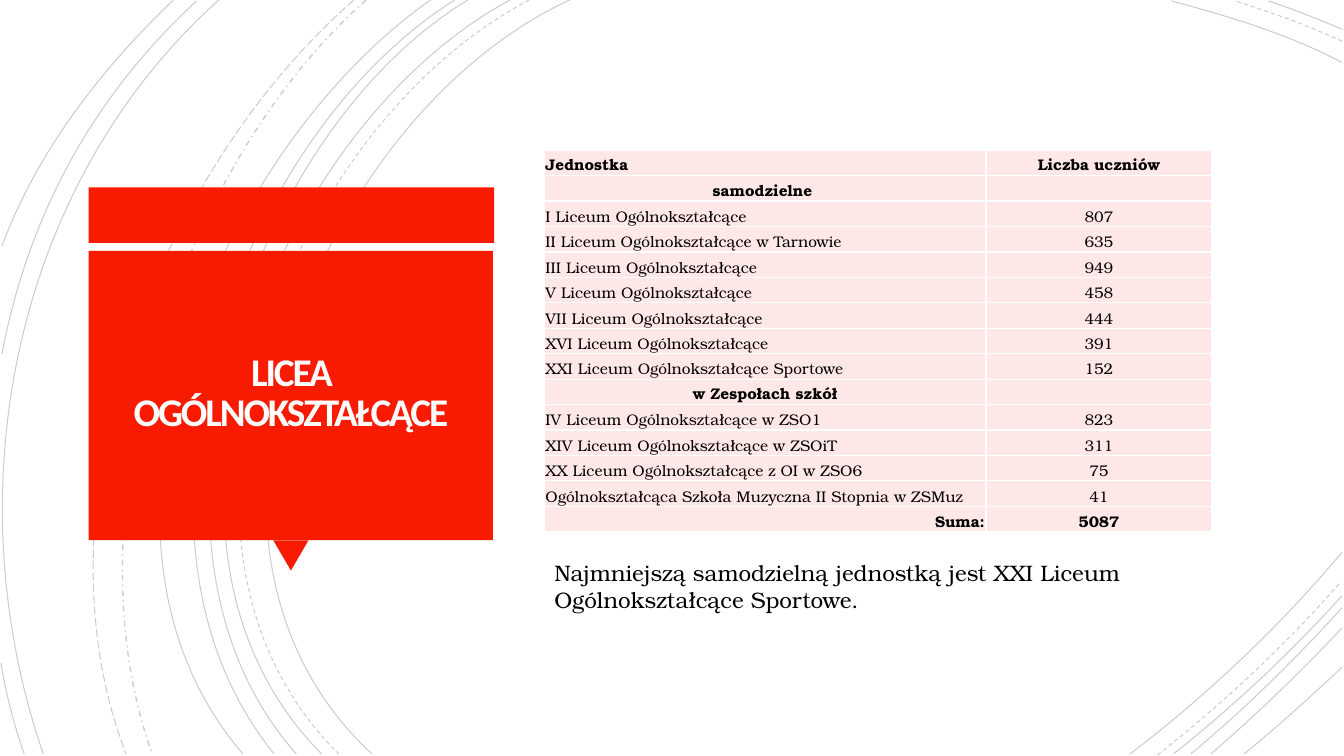
from lxml.etree import SubElement
from pptx import Presentation
from pptx.dml.color import RGBColor as RGB
from pptx.enum.dml import MSO_LINE as DASH
from pptx.enum.shapes import MSO_SHAPE as SHAPE
from pptx.enum.text import MSO_ANCHOR as ANCHOR, MSO_AUTO_SIZE as FIT, PP_ALIGN as ALIGN
from pptx.oxml.ns import qn
from pptx.util import Inches, Pt

COLORS = {"red": "F81B02", "pink": "FEE8E7", "white": "FFFFFF", "title": "FFFEFF", "black": "000000"}
SERIF = "TeX Gyre Bonum"
GRID_COLS, GRID_ROWS = 13.33, 7.5
CELL = Inches(1)

ARCS = [
    (5.65, 0, 3.15, 1.15, 1.43, 5.4, 3.69, 7.48),
    (13.31, 0.62, 12.78, 0.34, 12.18, 0.16, 11.62, 0.01),
    (11.21, 7.48, 11.97, 6.9, 12.69, 6.22, 13.31, 5.48),
    (5.06, 0, 2.7, 1.27, 1.1, 5.37, 3.19, 7.48),
    (13.31, 0.29, 13.07, 0.19, 12.83, 0.09, 12.58, 0.01),
    (11.64, 7.48, 12.23, 7.01, 12.8, 6.48, 13.31, 5.91),
    (4.64, 0, 2.44, 1.33, 1.1, 5.41, 2.94, 7.48),
    (11.81, 7.48, 12.34, 7.04, 12.84, 6.55, 13.31, 6.03),
    (4.51, 0, 2.31, 1.38, 0.97, 5.33, 2.72, 7.48),
    (12.01, 7.48, 12.46, 7.09, 12.9, 6.67, 13.31, 6.23),
    (4.27, 0, 2.17, 1.47, 0.53, 5.29, 2.41, 7.48),
    (12.34, 7.48, 12.67, 7.21, 12.99, 6.92, 13.31, 6.62),
    (2.17, 0, 0.11, 1.85, -0.46, 4.9, 0.43, 7.48),
    (1.95, 0.01, 0.92, 0.96, 0.28, 2.14, 0.02, 3.51),
    (0.01, 6.58, 0.06, 6.89, 0.14, 7.19, 0.24, 7.48),
    (1.72, 0, 1, 0.69, 0.37, 1.5, 0.02, 2.44),
]
DASHED_ARCS = [
    (5.25, 0, 2.85, 1.25, 1.23, 5.37, 3.36, 7.48),
    (13.31, 0.41, 12.97, 0.25, 12.6, 0.12, 12.25, 0.01),
    (11.48, 7.49, 12.13, 6.98, 12.75, 6.4, 13.3, 5.77),
]
DASH_DOT_ARC = (3.63, 0, 1.76, 1.66, 0.65, 5.09, 1.51, 7.48)
LONG_DASH_ARC = (3.51, 0, 1.57, 1.69, 0.29, 4.99, 1.25, 7.48)

SCHOOLS = [
    ("Jednostka", "Liczba uczniów"),
    ("samodzielne ", ""),
    ("I Liceum Ogólnokształcące", "807"),
    ("II Liceum Ogólnokształcące w Tarnowie", "635"),
    ("III Liceum Ogólnokształcące", "949"),
    ("V Liceum Ogólnokształcące", "458"),
    ("VII Liceum Ogólnokształcące", "444"),
    ("XVI Liceum Ogólnokształcące", "391"),
    ("XXI Liceum Ogólnokształcące Sportowe", "152"),
    ("w Zespołach szkół", ""),
    ("IV Liceum Ogólnokształcące w ZSO1", "823"),
    ("XIV Liceum Ogólnokształcące w ZSOiT", "311"),
    ("XX Liceum Ogólnokształcące z OI w ZSO6", "75"),
    ("Ogólnokształcąca Szkoła Muzyczna II Stopnia w ZSMuz", "41"),
    ("Suma:", "5087"),
]


def grid(*counts):
    """Turn counts of grid columns or rows into lengths."""
    return [round(n * CELL) for n in counts]


def set_all(obj, **values):
    """Set every given attribute on an object."""
    for name, value in values.items():
        setattr(obj, name, value)


def write(tf, text, color, align=ALIGN.LEFT, **font):
    """Write one formatted paragraph and return it with its run."""
    p = tf.paragraphs[0]
    p.alignment = align
    r = p.add_run()
    r.text = text
    set_all(r.font, **font)
    r.font.color.rgb = RGB.from_string(COLORS[color])
    return p, r


def add_arc(s, points, dash=DASH.SOLID, width=0.75):
    """Draw a faint cubic curve through a start, two controls and an end."""
    lengths = grid(*points)
    start, *rest = zip(lengths[::2], lengths[1::2])
    builder = s.shapes.build_freeform(*start)
    builder.add_line_segments(rest, close=False)
    sp = builder.convert_to_shape()
    sp.shadow.inherit = False
    sp.fill.background()
    set_all(sp.line, width=Pt(width), dash_style=dash)
    sp.line.color.rgb = RGB.from_string(COLORS["black"])
    color = sp.element.find(".//" + qn("a:ln")).find(".//" + qn("a:srgbClr"))
    SubElement(color, qn("a:alpha"), val="20000")
    outline = sp.element.find(".//" + qn("a:path"))
    curve = SubElement(outline, qn("a:cubicBezTo"))
    for segment in outline.findall(qn("a:lnTo")):
        curve.append(segment[0])
        outline.remove(segment)


def add_block(s, kind, *box, rotation=0):
    """Add a plain red shape."""
    sp = s.shapes.add_shape(kind, *grid(*box))
    sp.shadow.inherit = False
    sp.rotation = rotation
    sp.fill.solid()
    sp.fill.fore_color.rgb = RGB.from_string(COLORS["red"])
    sp.line.fill.background()


def add_title(s, text, *box):
    """Place the title above the red blocks."""
    title = s.shapes.title
    s.shapes.element.append(title.element)
    set_all(title, **dict(zip(("left", "top", "width", "height"), grid(*box))))
    tf = title.text_frame
    sides = ("margin_left", "margin_right", "margin_top", "margin_bottom")
    set_all(tf, word_wrap=True, auto_size=FIT.NONE, vertical_anchor=ANCHOR.MIDDLE,
            **dict.fromkeys(sides, Inches(0.25)))
    p, r = write(tf, text, "title", ALIGN.CENTER, size=Pt(28), name="Calibri", bold=True)
    p.line_spacing = 0.85
    r._r.get_or_add_rPr().set("spc", "-150")


def fill_cell(cell, text, align, bold):
    """Format one table cell with white borders and a pink fill."""
    inset = Inches(0.01)
    set_all(cell, margin_left=inset, margin_right=inset, margin_top=inset,
            margin_bottom=0, vertical_anchor=ANCHOR.BOTTOM)
    tc_pr = cell._tc.get_or_add_tcPr()
    for side in ("lnL", "lnR", "lnT", "lnB"):
        line = SubElement(tc_pr, qn("a:" + side), w=str(Pt(1)))
        SubElement(SubElement(line, qn("a:solidFill")), qn("a:srgbClr"), val=COLORS["white"])
    cell.fill.solid()
    cell.fill.fore_color.rgb = RGB.from_string(COLORS["pink"])
    if text:
        write(cell.text_frame, text, "black", align, size=Pt(11), name=SERIF, bold=bold)
    else:
        SubElement(cell.text_frame.paragraphs[0]._p, qn("a:endParaRPr"), sz="1100")


def add_school_table(s, left, top, widths, height):
    """Add the table of schools and their pupil numbers."""
    count = len(SCHOOLS)
    table = s.shapes.add_table(count, 2, *grid(left, top, sum(widths), height)).table
    set_all(table, first_row=False, horz_banding=False)
    for column, width in zip(table.columns, grid(*widths)):
        column.width = width
    for i, (school, pupils) in enumerate(SCHOOLS):
        table.rows[i].height = grid(height / count)[0]
        is_total = i == count - 1
        bold = i == 0 or is_total or not pupils
        align = ALIGN.RIGHT if is_total else ALIGN.LEFT if pupils else ALIGN.CENTER
        fill_cell(table.cell(i, 0), school, align, bold)
        fill_cell(table.cell(i, 1), pupils, ALIGN.CENTER, bold)


def add_note(s, text, *box):
    """Add the remark under the table."""
    tf = s.shapes.add_textbox(*grid(*box)).text_frame
    set_all(tf, word_wrap=True, auto_size=FIT.SHAPE_TO_FIT_TEXT)
    write(tf, text, "black", size=Pt(16), name=SERIF)


def main():
    """Build the slide and save it."""
    prs = Presentation()
    prs.slide_width, prs.slide_height = grid(GRID_COLS, GRID_ROWS)
    s = prs.slides.add_slide(prs.slide_layouts[5])
    for points in ARCS:
        add_arc(s, points)
    for points in DASHED_ARCS:
        add_arc(s, points, DASH.DASH)
    add_arc(s, DASH_DOT_ARC, DASH.DASH_DOT, 1)
    add_arc(s, LONG_DASH_ARC, DASH.LONG_DASH)
    add_block(s, SHAPE.RECTANGLE, 0.88, 1.86, 4.02, 0.55)
    add_block(s, SHAPE.ISOSCELES_TRIANGLE, 2.71, 5.36, 0.35, 0.3, rotation=180)
    add_block(s, SHAPE.RECTANGLE, 0.88, 2.49, 4.01, 2.87)
    add_title(s, "LICEA OGÓLNOKSZTAŁCĄCE", 0.97, 2.57, 3.83, 2.69)
    add_school_table(s, 5.4, 1.49, (4.38, 2.24), 3.79)
    add_note(s, "Najmniejszą samodzielną jednostką jest XXI Liceum Ogólnokształcące Sportowe.",
             5.4, 5.5, 7.54, 0.64)
    prs.save("out.pptx")


if __name__ == "__main__":
    main()
